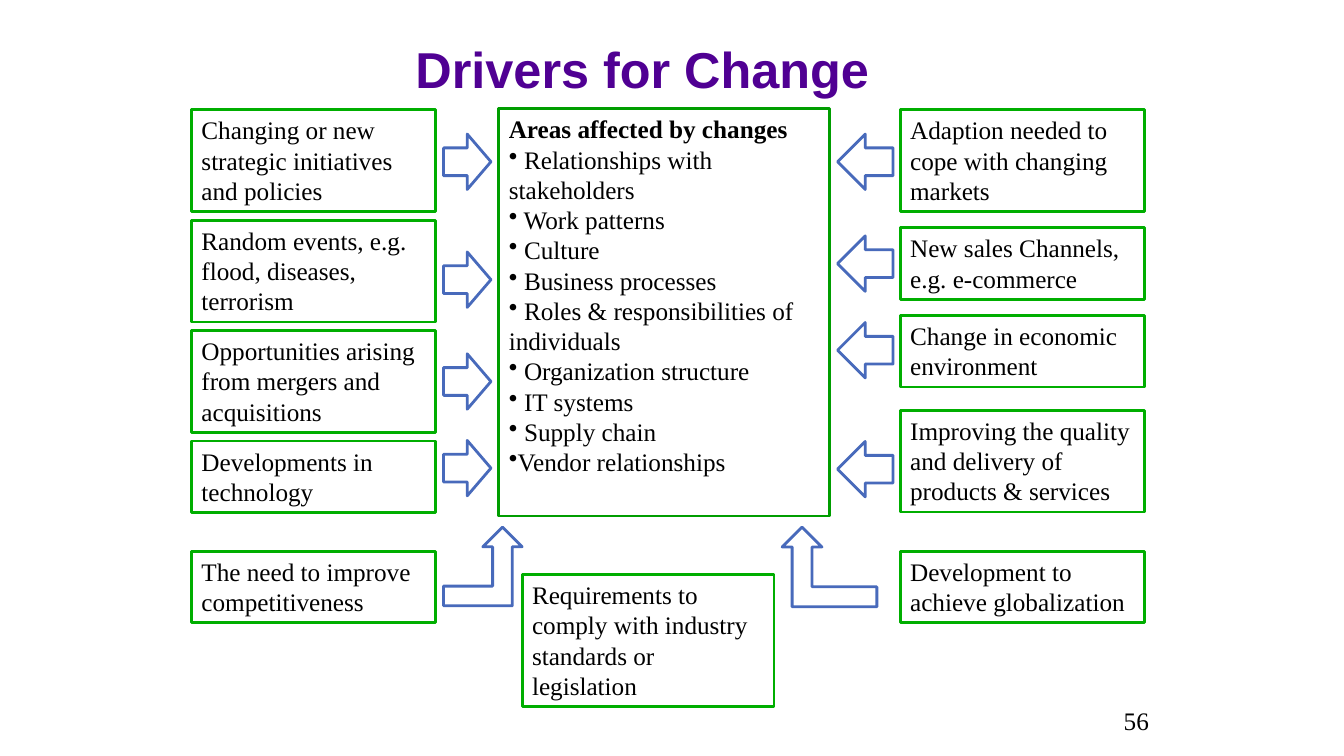
import pptx
import pptx.util
import pptx.dml.color
import pptx.enum.shapes
import pptx.enum.text
import pptx.oxml

SHAPE = pptx.enum.shapes.MSO_SHAPE
ALIGN = pptx.enum.text.PP_ALIGN
ANCHOR = pptx.enum.text.MSO_ANCHOR
COLORS = {"title": "500093", "text": "000000", "paper": "FFFFFF",
          "areas": "009D00", "driver": "00AE00", "arrow": "486ABB"}
WIDTH, HEIGHT = 13.33, 7.5
DRIVER_W, ARROW_H = 18.15, 7.33
TWO_LINES, THREE_LINES = 9.47, 13.47

LEFT_DRIVERS = [
    ("Changing or new strategic initiatives and policies", 0, THREE_LINES),
    ("Random events, e.g. flood, diseases, terrorism", 14.6, THREE_LINES),
    ("Opportunities arising from mergers and acquisitions", 29.2, THREE_LINES),
    ("Developments in technology", 43.8, TWO_LINES),
    ("The need to improve competitiveness", 58.4, TWO_LINES),
]
RIGHT_DRIVERS = [
    ("Adaption needed to cope with changing markets", 0, THREE_LINES),
    ("New sales Channels, e.g. e-commerce", 15.6, TWO_LINES),
    ("Change in economic environment", 27.2, TWO_LINES),
    ("Improving the quality and delivery of products & services", 39.74, THREE_LINES),
    ("Development to achieve globalization", 58.4, TWO_LINES),
]
AREAS = [" Relationships with stakeholders", " Work patterns", " Culture",
         " Business processes", " Roles & responsibilities of individuals",
         " Organization structure", " IT systems", " Supply chain",
         "Vendor relationships"]


def color(name):
    """Return the named colour."""
    return pptx.dml.color.RGBColor.from_string(COLORS[name])


def place(box):
    """Turn a box in percent of the slide into lengths."""
    x, y, w, h = box
    return [pptx.util.Inches(v * side / 100)
            for v, side in ((x, WIDTH), (y, HEIGHT), (w, WIDTH), (h, HEIGHT))]


def write(tf, text, size=18, font="Times New Roman", fill="text", bold=False,
          align=ALIGN.LEFT, bullet=False, first=True):
    """Write one formatted paragraph into a text frame."""
    tf.word_wrap = True
    p = tf.paragraphs[0] if first else tf.add_paragraph()
    p.alignment = align
    if bullet:
        pPr = p._p.get_or_add_pPr()
        pPr.set("marL", "0")
        pPr.set("indent", "0")
        pPr.append(pptx.oxml.parse_xml(
            '<a:buChar xmlns:a="http://schemas.openxmlformats.org/drawingml/2006/main" char="•"/>'))
    r = p.add_run()
    r.text = text
    r.font.size = pptx.util.Pt(size)
    r.font.name = font
    r.font.bold = bold
    r.font.color.rgb = color(fill)
    return p


def add_text(slide, box, text, **fmt):
    """Add a text box and return its shape."""
    s = slide.shapes.add_textbox(*place(box))
    write(s.text_frame, text, **fmt)
    return s


def add_outline(slide, kind, box, line, fill=None):
    """Add an outlined shape, hollow unless a fill is named."""
    s = slide.shapes.add_shape(kind, *place(box))
    s.shadow.inherit = False
    s.line.color.rgb = color(line)
    s.line.width = pptx.util.Pt(2)
    if fill:
        s.fill.solid()
        s.fill.fore_color.rgb = color(fill)
    else:
        s.fill.background()
    s.text_frame.vertical_anchor = ANCHOR.TOP
    return s


def add_driver(slide, box, text):
    """Add one driver box."""
    s = add_outline(slide, SHAPE.RECTANGLE, box, "driver", "paper")
    write(s.text_frame, text)


def add_title(slide, box):
    """Add the slide title."""
    s = add_text(slide, box, "Drivers for Change", size=36, font="Arial",
                 fill="title", bold=True, align=ALIGN.CENTER)
    s.text_frame.vertical_anchor = ANCHOR.MIDDLE


def add_areas(slide, box):
    """Add the central list of affected areas."""
    s = add_outline(slide, SHAPE.RECTANGLE, box, "areas", "paper")
    write(s.text_frame, "Areas affected by changes", bold=True)
    for area in AREAS:
        write(s.text_frame, area, bullet=True, first=False)


def add_side(slide, box, drivers, arrow, arrow_w, centers, mirrored=False):
    """Add a column of drivers with arrows on its inner edge."""
    x, y, w, _ = box
    driver_x = x + w - DRIVER_W if mirrored else x
    arrow_x = x if mirrored else x + w - arrow_w
    for text, top, h in drivers:
        add_driver(slide, (driver_x, y + top, DRIVER_W, h), text)
    for center in centers:
        add_outline(slide, arrow,
                    (arrow_x, y + center - ARROW_H / 2, arrow_w, ARROW_H), "arrow")


def add_bottom(slide, box):
    """Add the requirements box between two bent arrows."""
    x, y, w, h = box
    add_driver(slide, (x + 5.85, y + 6.27, 18.75, h - 6.27),
               "Requirements to comply with industry standards or legislation")
    add_outline(slide, SHAPE.BENT_UP_ARROW, (x, y, 5.85, 10.4), "arrow")
    s = add_outline(slide, SHAPE.BENT_UP_ARROW,
                    (x + w - 7.05, y, 7.05, 10.53), "arrow")
    s.element.spPr.xfrm.set("flipH", "1")


def main():
    """Build and save the slide."""
    prs = pptx.Presentation()
    prs.slide_width = pptx.util.Inches(WIDTH)
    prs.slide_height = pptx.util.Inches(HEIGHT)
    slide = prs.slides.add_slide(prs.slide_layouts[6])
    add_title(slide, (30, 4.4, 35.6, 9.2))
    add_areas(slide, (37.12, 14.4, 24.6, 53.87))
    add_side(slide, (14.25, 14.53, 22.28, 67.87), LEFT_DRIVERS,
             SHAPE.RIGHT_ARROW, 3.53, (6.87, 22.47, 35.94, 47.4))
    add_side(slide, (62.32, 14.53, 22.81, 67.87), RIGHT_DRIVERS,
             SHAPE.LEFT_ARROW, 4.13, (6.87, 20.34, 31.8, 47.54), mirrored=True)
    add_bottom(slide, (33, 69.73, 32.25, 23.74))
    add_text(slide, (82.87, 92.67, 4.58, 5.33), "56")
    prs.save("out.pptx")


if __name__ == "__main__":
    main()
